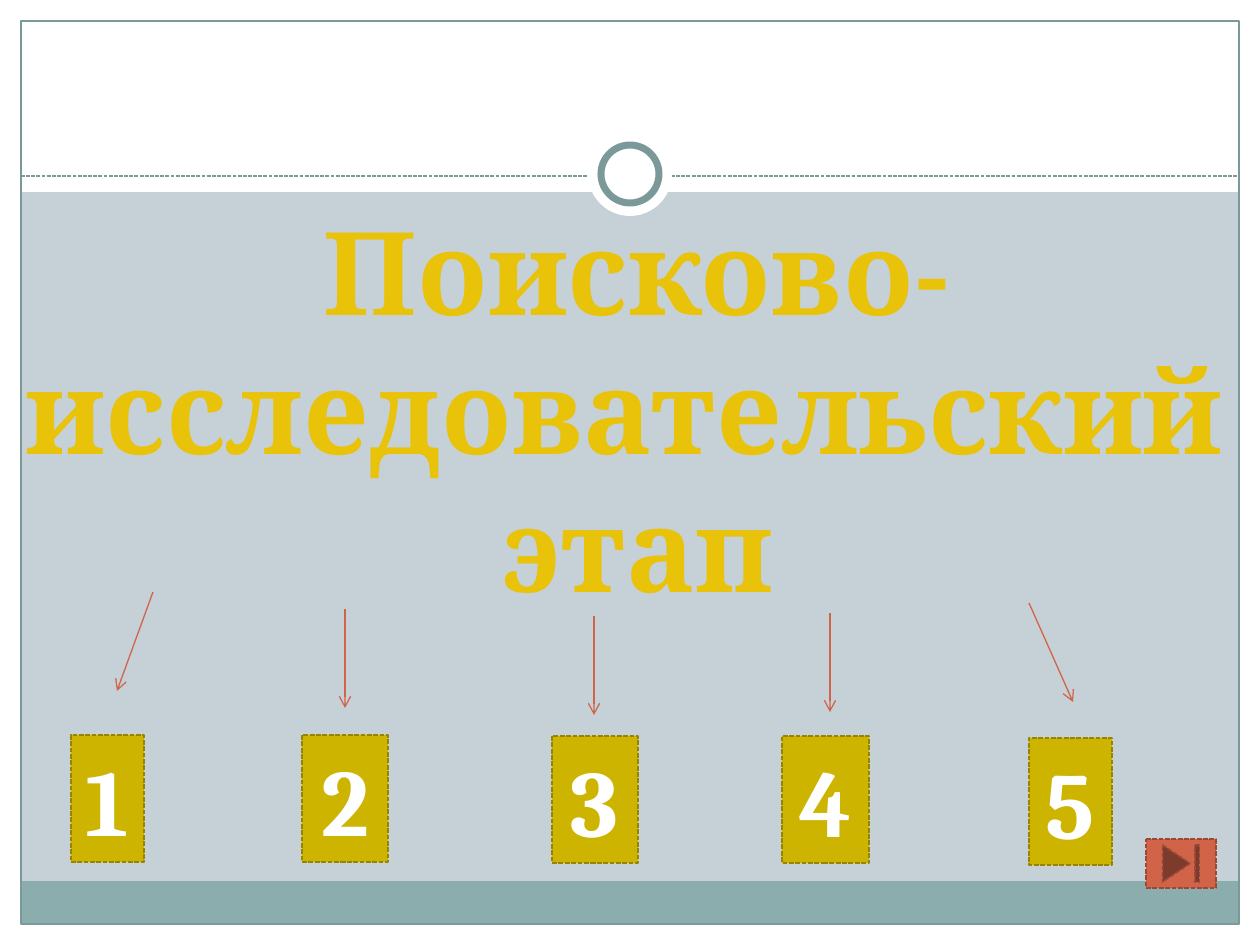
from dataclasses import dataclass

from lxml import etree
from pptx import Presentation
from pptx.dml.color import RGBColor
from pptx.enum.dml import MSO_LINE
from pptx.enum.shapes import MSO_CONNECTOR, MSO_SHAPE
from pptx.enum.text import MSO_ANCHOR, MSO_AUTO_SIZE, PP_ALIGN
from pptx.oxml.ns import qn
from pptx.util import Pt

RECT = MSO_SHAPE.RECTANGLE
OVAL = MSO_SHAPE.OVAL
END_BUTTON = MSO_SHAPE.ACTION_BUTTON_END
STRAIGHT = MSO_CONNECTOR.STRAIGHT
DASH = MSO_LINE.SQUARE_DOT
CENTER = PP_ALIGN.CENTER
TOP, MIDDLE = MSO_ANCHOR.TOP, MSO_ANCHOR.MIDDLE
FIT_SHAPE = MSO_AUTO_SIZE.SHAPE_TO_FIT_TEXT

EMU_PER_PX = 914400 / 126
TITLE_ONLY = 5
WIDTH, HEIGHT = 1260, 945
MARGIN = 21
BAND_HEIGHT = 43
CARD_HEIGHT = 127
ARROW_DROP = 99


@dataclass(frozen=True)
class Theme:
    font: str = "Cambria"
    title_size: int = 66
    number_size: int = 54
    background: str = "C5D1D7"
    white: str = "FFFFFF"
    band: str = "8CADAE"
    frame: str = "7C999A"
    title: str = "E9C20A"
    card: str = "CCB400"
    card_edge: str = "978500"
    accent: str = "D16349"
    accent_edge: str = "9B4936"


THEME = Theme()

# number, card left, card top, card width, arrow start x, arrow start y, arrow end x
STEPS = [
    ("1", 71, 735, 73, 153, 592, 117),
    ("2", 302, 735, 86, 345, 609, 345),
    ("3", 552, 736, 86, 594, 616, 594),
    ("4", 782, 736, 87, 830, 613, 830),
    ("5", 1029, 738, 83, 1029, 603, 1073),
]


def px(*lengths):
    return [round(length * EMU_PER_PX) for length in lengths]


def rgb(color):
    return RGBColor.from_string(color)


def style_line(line, color, width, dash=None):
    line.color.rgb = rgb(color)
    line.width = Pt(width)
    if dash is not None:
        line.dash_style = dash


def add_figure(slide, kind, box, fill=None, edge=None, width=0.75, dash=None):
    figure = slide.shapes.add_shape(kind, *px(*box))
    figure.shadow.inherit = False
    if fill:
        figure.fill.solid()
        figure.fill.fore_color.rgb = rgb(fill)
    else:
        figure.fill.background()
    if edge:
        style_line(figure.line, edge, width, dash)
    else:
        figure.line.fill.background()
    return figure


def add_line(slide, start, end, color, dash=None, arrow=False):
    line = slide.shapes.add_connector(STRAIGHT, *px(*start, *end))
    style_line(line.line, color, 0.75, dash)
    if arrow:
        outline = line.line._get_or_add_ln()
        etree.SubElement(outline, qn("a:tailEnd"), type="arrow")
    etree.SubElement(line._element.spPr, qn("a:effectLst"))


def write_centred(frame, text, size, color, anchor):
    frame.text = text
    frame.word_wrap = False
    frame.auto_size = FIT_SHAPE
    frame.vertical_anchor = anchor
    for paragraph in frame.paragraphs:
        paragraph.alignment = CENTER
        for run in paragraph.runs:
            run.font.name = THEME.font
            run.font.size = Pt(size)
            run.font.bold = True
            run.font.color.rgb = rgb(color)


def add_backdrop(slide):
    """Draw the white margins, the bottom band, the frame and the ring."""
    slide.background.fill.solid()
    slide.background.fill.fore_color.rgb = rgb(THEME.background)
    inner_width, inner_height = WIDTH - 2 * MARGIN, HEIGHT - 2 * MARGIN
    bottom, right = HEIGHT - MARGIN, WIDTH - MARGIN
    for box in (
        (0, bottom, WIDTH, MARGIN),
        (0, 0, WIDTH, 192),
        (0, 0, MARGIN, HEIGHT),
        (right, 0, MARGIN, HEIGHT),
    ):
        add_figure(slide, RECT, box, THEME.white)
    add_figure(slide, RECT, (MARGIN, bottom - BAND_HEIGHT, inner_width, BAND_HEIGHT), THEME.band)
    add_figure(slide, RECT, (MARGIN, MARGIN, inner_width, inner_height), edge=THEME.frame)
    add_line(slide, (MARGIN, 176), (right, 176), THEME.frame, DASH)
    add_figure(slide, OVAL, (588, 132, 84, 84), THEME.white)
    add_figure(slide, OVAL, (601, 145, 58, 58), THEME.white, THEME.frame, 4)


def add_title(slide):
    title = slide.shapes.title
    title.left, title.top, title.width, title.height = px(0, 194, 1274, 432)
    write_centred(title.text_frame, "Поисково-\nисследовательский \nэтап",
                  THEME.title_size, THEME.title, TOP)


def add_step(slide, number, left, top, width, start_x, start_y, end_x):
    """Draw a numbered card and the arrow that points to it."""
    card = add_figure(slide, RECT, (left, top, width, CARD_HEIGHT),
                      THEME.card, THEME.card_edge, 0.9, DASH)
    write_centred(card.text_frame, number, THEME.number_size, THEME.white, MIDDLE)
    add_line(slide, (start_x, start_y), (end_x, start_y + ARROW_DROP), THEME.accent, arrow=True)


def main():
    presentation = Presentation()
    presentation.slide_width, presentation.slide_height = px(WIDTH, HEIGHT)
    slide = presentation.slides.add_slide(presentation.slide_layouts[TITLE_ONLY])
    add_backdrop(slide)
    add_title(slide)
    for step in STEPS:
        add_step(slide, *step)
    add_figure(slide, END_BUTTON, (1146, 839, 70, 49),
               THEME.accent, THEME.accent_edge, 0.9, DASH)
    presentation.save("out.pptx")


if __name__ == "__main__":
    main()
